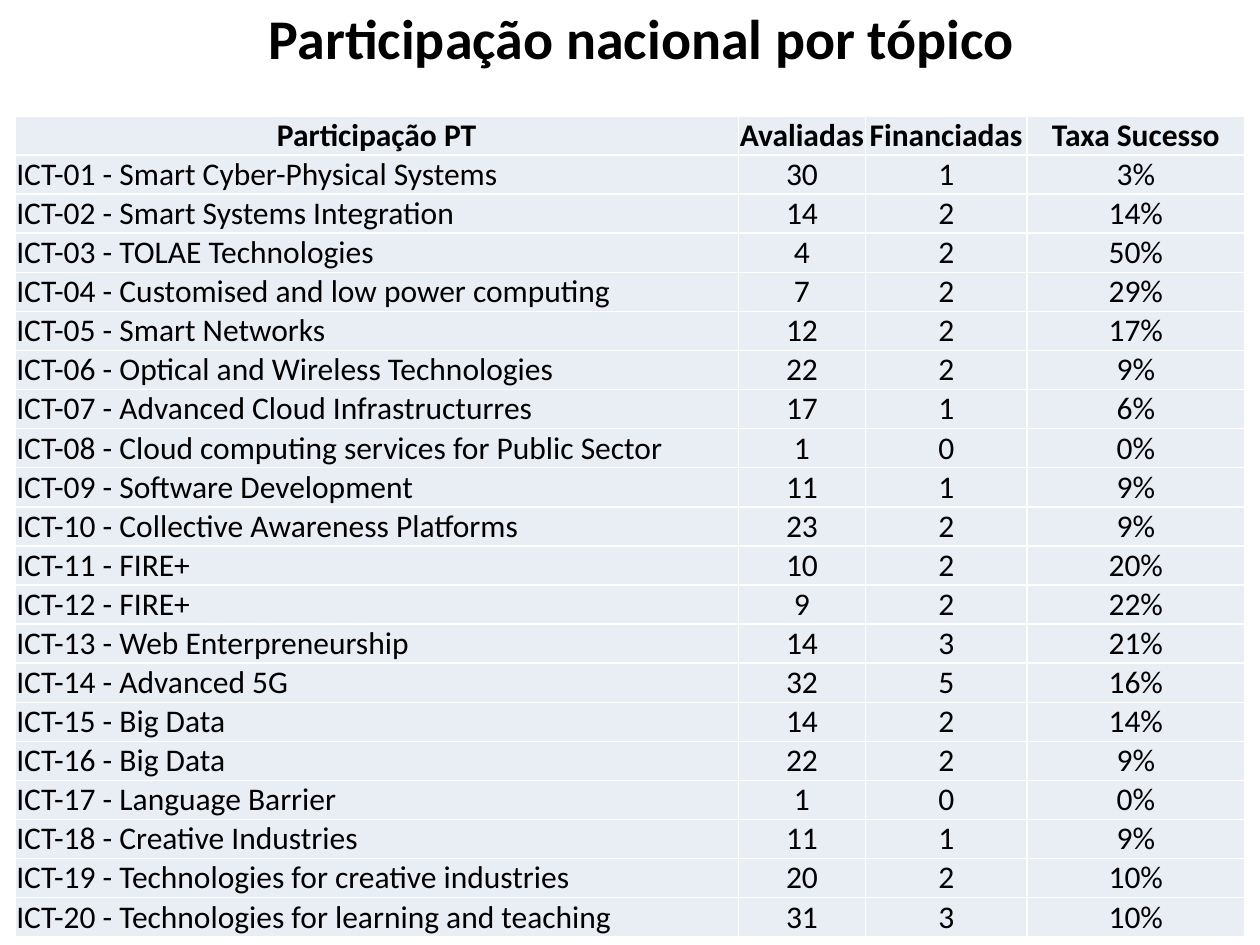
from pptx import Presentation
from pptx.dml.color import RGBColor
from pptx.enum.text import MSO_ANCHOR, PP_ALIGN
from pptx.util import Inches, Pt

LEFT, CENTER = PP_ALIGN.LEFT, PP_ALIGN.CENTER
MIDDLE = MSO_ANCHOR.MIDDLE

BLACK = RGBColor(0x00, 0x00, 0x00)
PALE_BLUE = RGBColor(0xE9, 0xED, 0xF4)
FONT = "Calibri"

TITLE = "Participação nacional por tópico"
HEADER = ("Participação PT", "Avaliadas", "Financiadas", "Taxa Sucesso")
COLUMN_WIDTHS = (5.74, 1.01, 1.28, 1.73)

# Topic, evaluated proposals, funded proposals
TOPICS = [
    ("Smart Cyber-Physical Systems", 30, 1),
    ("Smart Systems Integration", 14, 2),
    ("TOLAE Technologies", 4, 2),
    ("Customised and low power computing", 7, 2),
    ("Smart Networks", 12, 2),
    ("Optical and Wireless Technologies", 22, 2),
    ("Advanced Cloud Infrastructurres", 17, 1),
    ("Cloud computing services for Public Sector", 1, 0),
    ("Software Development", 11, 1),
    ("Collective Awareness Platforms", 23, 2),
    ("FIRE+", 10, 2),
    ("FIRE+", 9, 2),
    ("Web Enterpreneurship", 14, 3),
    ("Advanced 5G", 32, 5),
    ("Big Data", 14, 2),
    ("Big Data", 22, 2),
    ("Language Barrier", 1, 0),
    ("Creative Industries", 11, 1),
    ("Technologies for creative industries", 20, 2),
    ("Technologies for learning and teaching", 31, 3),
]


def style_paragraph(paragraph, size, bold, alignment):
    paragraph.alignment = alignment
    paragraph.font.name = FONT
    paragraph.font.size = Pt(size)
    paragraph.font.bold = bold
    paragraph.font.color.rgb = BLACK


def add_title(slide, left, top, width, height):
    text_frame = slide.shapes.add_textbox(left, top, width, height).text_frame
    text_frame.word_wrap = True
    paragraph = text_frame.paragraphs[0]
    paragraph.text = TITLE
    paragraph.line_spacing = 0.8
    paragraph.space_before = Pt(12)
    paragraph.space_after = Pt(6)
    style_paragraph(paragraph, 32, True, CENTER)


def fill_cell(cell, text, bold, alignment):
    cell.fill.solid()
    cell.fill.fore_color.rgb = PALE_BLUE
    cell.vertical_anchor = MIDDLE
    cell.margin_left = cell.margin_right = Inches(0.01)
    cell.margin_top = cell.margin_bottom = 0
    paragraph = cell.text_frame.paragraphs[0]
    paragraph.text = text
    style_paragraph(paragraph, 18, bold, alignment)


def topic_rows():
    """Return the body rows, with the success rate worked out from the counts."""
    return [
        (f"ICT-{number:02} - {topic}", str(evaluated), str(funded),
         f"{funded / evaluated:.0%}")
        for number, (topic, evaluated, funded) in enumerate(TOPICS, start=1)
    ]


def add_participation_table(slide, left, top, width, height):
    rows = [HEADER, *topic_rows()]
    table = slide.shapes.add_table(
        len(rows), len(HEADER), left, top, width, height).table
    table.first_row = False
    table.horz_banding = False
    for column, column_width in zip(table.columns, COLUMN_WIDTHS):
        column.width = Inches(column_width)
    for row_index, row in enumerate(rows):
        is_header = row_index == 0
        for column_index, text in enumerate(row):
            alignment = CENTER if is_header or column_index else LEFT
            fill_cell(table.cell(row_index, column_index), text, is_header, alignment)


def main():
    presentation = Presentation()
    presentation.slide_width = Inches(10)
    presentation.slide_height = Inches(7.5)
    slide = presentation.slides.add_slide(presentation.slide_layouts[6])
    add_participation_table(
        slide, Inches(0.12), Inches(0.92), Inches(9.76), Inches(6.52))
    add_title(slide, Inches(0.45), Inches(0.08), Inches(9.29), Inches(0.54))
    presentation.save("out.pptx")


if __name__ == "__main__":
    main()
